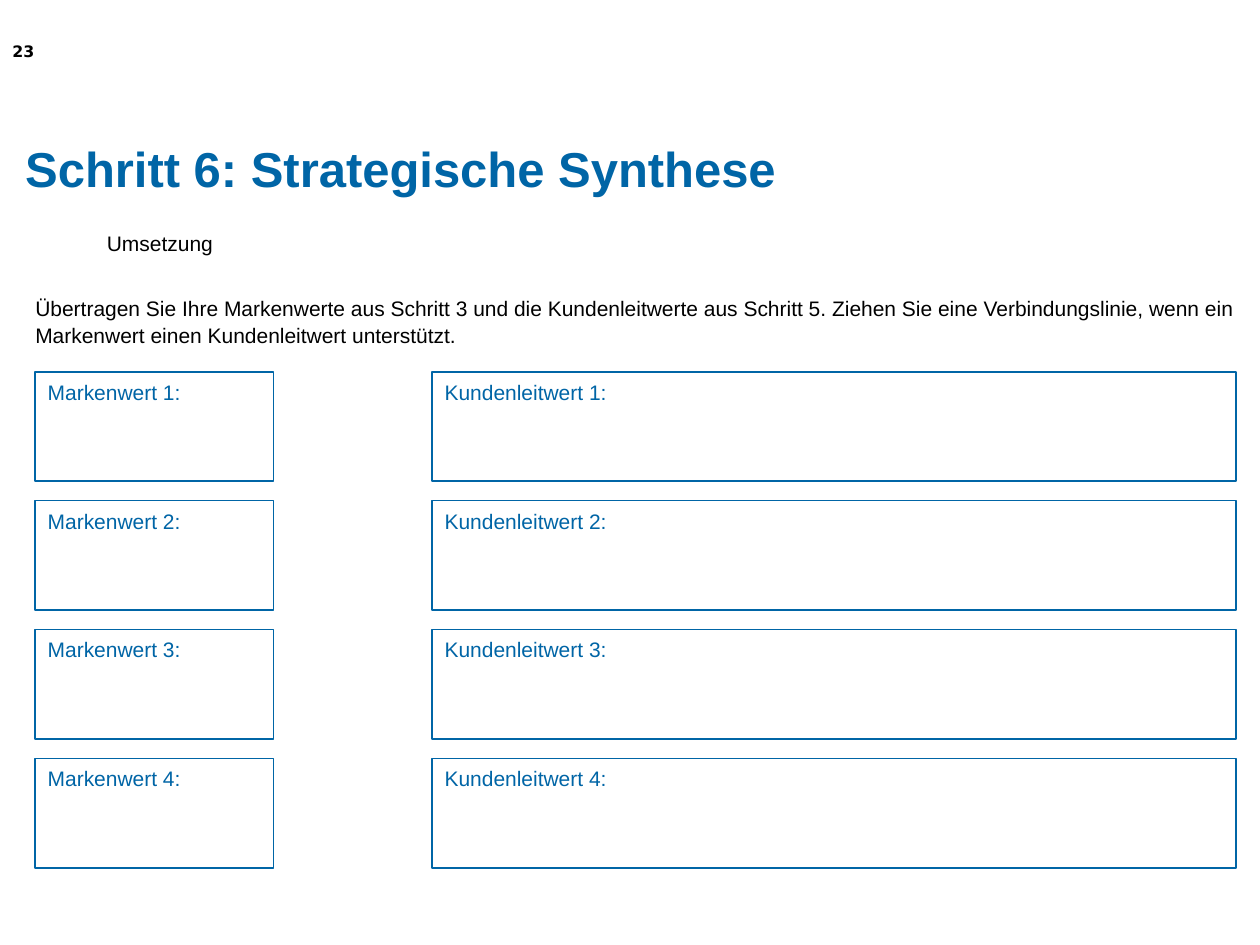
import pptx
import pptx.util
import pptx.dml.color
import pptx.enum.shapes
import pptx.enum.text

Inches = pptx.util.Inches
Pt = pptx.util.Pt
BLUE = "0065A6"
BLACK = "000000"


def color(value):
    return pptx.dml.color.RGBColor.from_string(value)


class SlideBuilder:
    font_name = "Arial"
    body_size = 12

    def __init__(self, presentation):
        self.slide = presentation.slides.add_slide(presentation.slide_layouts[5])

    def add_text(self, shape, text, size, fill, bold=False, font_name=None, inset=None):
        """Put one formatted, left-aligned run into a shape and return its paragraph."""
        frame = shape.text_frame
        frame.word_wrap = True
        frame.vertical_anchor = pptx.enum.text.MSO_ANCHOR.TOP
        if inset is not None:
            frame.margin_left = frame.margin_right = Inches(inset)
            frame.margin_top = frame.margin_bottom = Inches(inset)
        paragraph = frame.paragraphs[0]
        paragraph.alignment = pptx.enum.text.PP_ALIGN.LEFT
        run = paragraph.add_run()
        run.text = text
        run.font.name = font_name or self.font_name
        run.font.size = Pt(size)
        run.font.bold = bold
        run.font.color.rgb = color(fill)
        return paragraph

    def title(self, text, left, top, width, height):
        shape = self.slide.shapes.title
        shape.left, shape.top = Inches(left), Inches(top)
        shape.width, shape.height = Inches(width), Inches(height)
        self.add_text(shape, text, 28, BLUE, bold=True, inset=0)
        shape.text_frame.vertical_anchor = pptx.enum.text.MSO_ANCHOR.MIDDLE
        shape.text_frame.auto_size = pptx.enum.text.MSO_AUTO_SIZE.NONE

    def text_box(self, text, left, top, width, height, size=body_size,
                 fill=BLACK, **style):
        shape = self.slide.shapes.add_textbox(
            Inches(left), Inches(top), Inches(width), Inches(height))
        return self.add_text(shape, text, size, fill, **style)

    def frame(self, left, top, width, height):
        shape = self.slide.shapes.add_shape(
            pptx.enum.shapes.MSO_SHAPE.RECTANGLE,
            Inches(left), Inches(top), Inches(width), Inches(height))
        shape.shadow.inherit = False
        shape.fill.background()
        shape.line.color.rgb = color(BLUE)
        shape.line.width = Pt(1)

    def answer_field(self, label, left, top, width, height):
        self.frame(left, top, width, height)
        self.text_box(label, left, top + 0.01, 1.89, 0.3, fill=BLUE)


def main():
    presentation = pptx.Presentation()
    presentation.slide_width = Inches(10)
    presentation.slide_height = Inches(7.5)
    builder = SlideBuilder(presentation)

    builder.title("Schritt 6: Strategische Synthese", 0.2, 1.05, 9.61, 0.57)
    instruction = builder.text_box(
        "Übertragen Sie Ihre Markenwerte aus Schritt 3 und die Kundenleitwerte "
        "aus Schritt 5. Ziehen Sie eine Verbindungslinie, wenn ein Markenwert "
        "einen Kundenleitwert unterstützt.", 0.28, 2.33, 9.61, 0.47, inset=0)
    instruction.line_spacing = 1.08
    builder.text_box("23", 0, 0.28, 0.79, 0.47, size=9, bold=True,
                     font_name="DejaVu Sans")
    builder.text_box("Umsetzung", 0.75, 1.78, 1.1, 0.3)

    first_top, last_top, field_height, row_count = 2.95, 6.02, 0.87, 4
    row_pitch = (last_top - first_top) / (row_count - 1)
    columns = [("Markenwert", 0.28, 1.89), ("Kundenleitwert", 3.43, 6.38)]
    for name, left, width in columns:
        for row in range(row_count):
            top = first_top + row * row_pitch
            builder.answer_field(f"{name} {row + 1}:", left, top, width, field_height)

    presentation.save("out.pptx")


if __name__ == "__main__":
    main()
